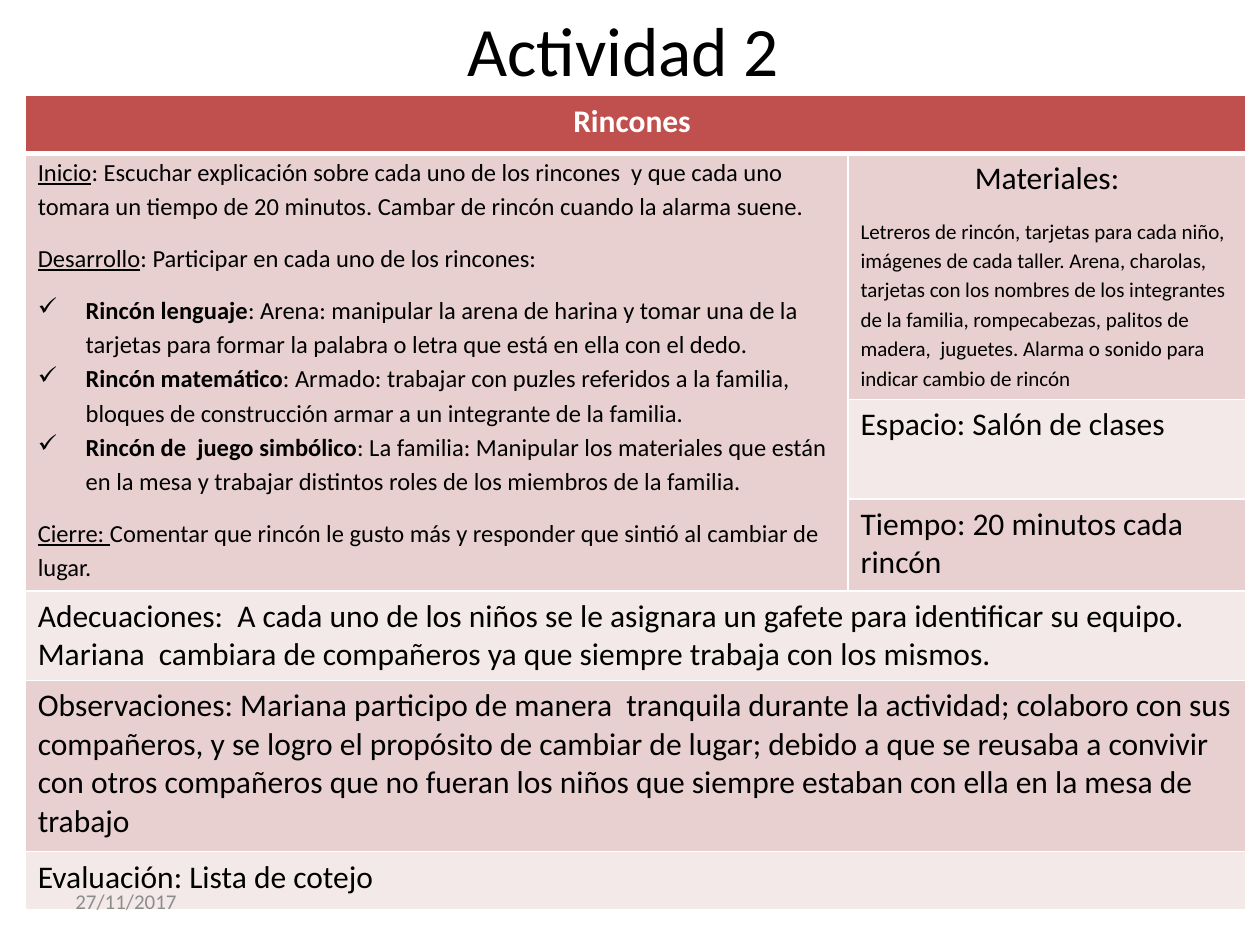
from lxml.etree import SubElement
from pptx import Presentation
from pptx.dml.color import RGBColor
from pptx.enum.text import MSO_ANCHOR, PP_ALIGN
from pptx.oxml import parse_xml
from pptx.oxml.ns import nsdecls, qn
from pptx.util import Inches, Pt

FONT = "Calibri"
BLACK = RGBColor(0x00, 0x00, 0x00)
WHITE = RGBColor(0xFF, 0xFF, 0xFF)
GRAY = RGBColor(0x8C, 0x8C, 0x8C)
RED = RGBColor(0xC0, 0x50, 0x4D)
PINK = RGBColor(0xE8, 0xD0, 0xD0)
PALE = RGBColor(0xF4, 0xE9, 0xE9)

COLUMN_WIDTHS = [6.53, 3.16]
ROW_HEIGHTS = [0.46, 1.95, 0.79, 0.73, 0.56, 1.36, 0.46]
ROW_FILLS = [RED, PINK, PALE, PINK, PALE, PINK, PALE]
HEADER_RULE = 3
GRID_RULE = 1

SPACED = {"line_spacing": 1.15, "space_after": Pt(10)}
TIGHT = {"line_spacing": 1.15, "space_after": Pt(0)}
CENTERED = {"alignment": PP_ALIGN.CENTER}
UNDERLINED = {"underline": True}
BOLD = {"bold": True}

STEPS = [
    ("Inicio", ": Escuchar explicación sobre cada uno de los rincones  y que cada uno "
     "tomara un tiempo de 20 minutos. Cambar de rincón cuando la alarma suene.",
     UNDERLINED, SPACED, False),
    ("Desarrollo", ": Participar en cada uno de los rincones:", UNDERLINED, SPACED, False),
    ("Rincón lenguaje", ": Arena: manipular la arena de harina y tomar una de la tarjetas "
     "para formar la palabra o letra que está en ella con el dedo.", BOLD, TIGHT, True),
    ("Rincón matemático", ": Armado: trabajar con puzles referidos a la familia, bloques de "
     "construcción armar a un integrante de la familia.", BOLD, TIGHT, True),
    ("Rincón de  juego simbólico", ": La familia: Manipular los materiales que están en la "
     "mesa y trabajar distintos roles de los miembros de la familia.", BOLD, SPACED, True),
    ("Cierre: ", "Comentar que rincón le gusto más y responder que sintió al cambiar de lugar.",
     UNDERLINED, SPACED, False),
]
MATERIALS = (
    "Letreros de rincón, tarjetas para cada niño, imágenes de cada taller. Arena, charolas, "
    "tarjetas con los nombres de los integrantes de la familia, rompecabezas, palitos de "
    "madera,  juguetes. Alarma o sonido para indicar cambio de rincón"
)
SIMPLE_CELLS = {
    (2, 1): "Espacio: Salón de clases",
    (3, 1): "Tiempo: 20 minutos cada rincón",
    (4, 0): "Adecuaciones:  A cada uno de los niños se le asignara un gafete para identificar "
            "su equipo.  Mariana  cambiara de compañeros ya que siempre trabaja con los mismos.",
    (5, 0): "Observaciones: Mariana participo de manera  tranquila durante la actividad; "
            "colaboro con sus compañeros, y se logro el propósito de cambiar de lugar; debido a "
            "que se reusaba a convivir con otros compañeros que no fueran los niños que siempre "
            "estaban con ella en la mesa de trabajo",
    (6, 0): "Evaluación: Lista de cotejo",
}


def apply_format(target, values):
    for name, value in values.items():
        setattr(target, name, value)


def add_run(paragraph, text, size, color=BLACK, **values):
    run = paragraph.add_run()
    run.text = text
    apply_format(run.font, {"name": FONT, "size": Pt(size), "bold": False, **values})
    run.font.color.rgb = color


def add_check_bullet(paragraph):
    properties = paragraph._p.get_or_add_pPr()
    properties.set("marL", str(Inches(0.38)))
    properties.set("indent", str(-Inches(0.38)))
    SubElement(properties, qn("a:buChar")).set("char", "✓")


def style_cell(cell, row):
    cell.fill.solid()
    cell.fill.fore_color.rgb = ROW_FILLS[row]
    widths = {
        "lnL": GRID_RULE,
        "lnR": GRID_RULE,
        "lnT": HEADER_RULE if row == 1 else GRID_RULE,
        "lnB": HEADER_RULE if row == 0 else GRID_RULE,
    }
    properties = cell._tc.get_or_add_tcPr()
    for position, (side, width) in enumerate(widths.items()):
        properties.insert(position, parse_xml(
            f'<a:{side} {nsdecls("a")} w="{Pt(width)}"><a:solidFill>'
            f'<a:srgbClr val="{WHITE}"/></a:solidFill></a:{side}>'))


def fill_steps(cell):
    apply_format(cell, {"margin_top": 0, "margin_bottom": 0})
    for index, (label, text, label_format, spacing, bulleted) in enumerate(STEPS):
        frame = cell.text_frame
        paragraph = frame.add_paragraph() if index else frame.paragraphs[0]
        apply_format(paragraph, spacing)
        if bulleted:
            add_check_bullet(paragraph)
        add_run(paragraph, label, 14, **label_format)
        add_run(paragraph, text, 14)


def fill_materials(cell):
    apply_format(cell, {"margin_top": 0, "margin_bottom": 0})
    heading = cell.text_frame.paragraphs[0]
    apply_format(heading, {**SPACED, **CENTERED})
    add_run(heading, "Materiales:", 18)
    details = cell.text_frame.add_paragraph()
    apply_format(details, SPACED)
    add_run(details, MATERIALS, 12)


def add_title(slide, left, top, width, height):
    title = slide.shapes.title
    apply_format(title, {"left": left, "top": top, "width": width, "height": height})
    title.text_frame.vertical_anchor = MSO_ANCHOR.MIDDLE
    paragraph = title.text_frame.paragraphs[0]
    apply_format(paragraph, CENTERED)
    add_run(paragraph, "Actividad 2 ", 39.6)


def add_plan_table(slide, left, top, width, height):
    table = slide.shapes.add_table(
        len(ROW_HEIGHTS), len(COLUMN_WIDTHS), left, top, width, height).table
    apply_format(table, {"first_row": False, "horz_banding": False})
    for column, column_width in zip(table.columns, COLUMN_WIDTHS):
        column.width = Inches(column_width)
    for index, row_height in enumerate(ROW_HEIGHTS):
        table.rows[index].height = Inches(row_height)
        for cell in table.rows[index].cells:
            style_cell(cell, index)
    for row in (0, 4, 5, 6):
        table.cell(row, 0).merge(table.cell(row, 1))
    table.cell(1, 0).merge(table.cell(3, 0))

    header = table.cell(0, 0).text_frame.paragraphs[0]
    apply_format(header, CENTERED)
    add_run(header, "Rincones ", 18, WHITE, bold=True)
    fill_steps(table.cell(1, 0))
    fill_materials(table.cell(1, 1))
    for (row, column), text in SIMPLE_CELLS.items():
        add_run(table.cell(row, column).text_frame.paragraphs[0], text, 18)


def add_date(slide, left, top, width, height):
    frame = slide.shapes.add_textbox(left, top, width, height).text_frame
    apply_format(frame, {"word_wrap": True, "vertical_anchor": MSO_ANCHOR.MIDDLE})
    add_run(frame.paragraphs[0], "27/11/2017", 12, GRAY)


def main():
    presentation = Presentation()
    apply_format(presentation, {"slide_width": Inches(10), "slide_height": Inches(7.5)})
    slide = presentation.slides.add_slide(presentation.slide_layouts[5])
    add_title(slide, Inches(0.51), Inches(0), Inches(9), Inches(0.77))
    add_plan_table(slide, Inches(0.2), Inches(0.76),
                   Inches(sum(COLUMN_WIDTHS)), Inches(sum(ROW_HEIGHTS)))
    add_date(slide, Inches(0.5), Inches(6.95), Inches(2.33), Inches(0.4))
    presentation.save("out.pptx")


if __name__ == "__main__":
    main()
